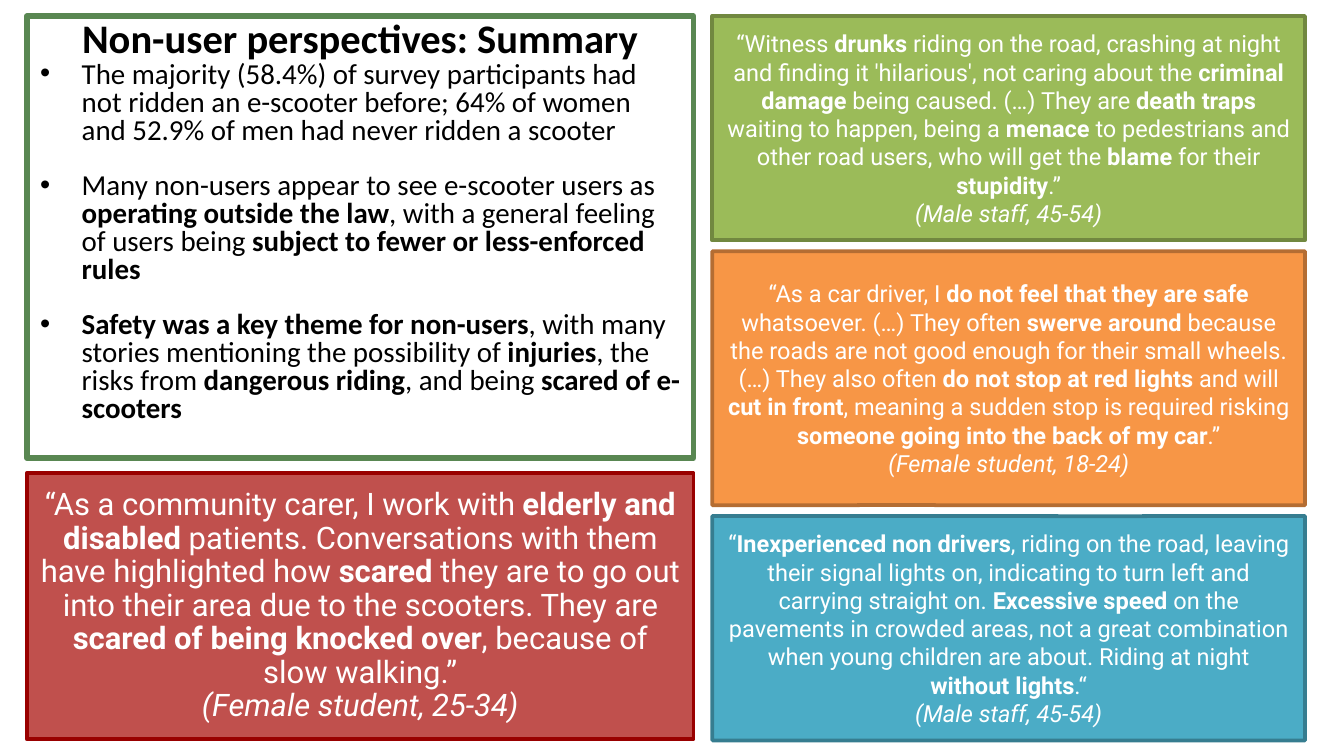
from lxml.etree import SubElement
from pptx import Presentation
from pptx.dml.color import RGBColor
from pptx.enum.shapes import MSO_SHAPE
from pptx.enum.text import MSO_ANCHOR, MSO_AUTO_SIZE, PP_ALIGN
from pptx.oxml.ns import qn
from pptx.util import Pt

# Content: text between ** marks is bold
TITLE = "Non-user perspectives: Summary"
POINTS = [
    "The majority (58.4%) of survey participants had not ridden an e-scooter before; "
    "64% of women and 52.9% of men had never ridden a scooter",
    "Many non-users appear to see e-scooter users as **operating outside the law**, with a "
    "general feeling of users being **subject to fewer or less-enforced rules**",
    "**Safety was a key theme for non-users**, with many stories mentioning the possibility of "
    "**injuries**, the risks from **dangerous riding**, and being **scared of e-scooters**",
]
CARER = dict(
    text="“As a community carer, I work with **elderly and disabled **patients. Conversations "
         "with them have highlighted how **scared** they are to go out into their area due to the "
         "scooters. They are **scared of being knocked over**, because of slow walking.”",
    who="(Female student, 25-34)", tone="red", tail=(0.202, -0.5), high=142.6)
QUOTES = [
    dict(text="“Witness **drunks** riding on the road, crashing at night and finding it "
              "'hilarious', not caring about the **criminal damage **being caused. (…) They are "
              "**death traps **waiting to happen, being a **menace** to pedestrians and other road "
              "users, who will get the **blame** for their **stupidity**.”",
         who="(Male staff, 45-54)", tone="green", tail=(0.5, 0.192), high=120.2),
    dict(text="“As a car driver, I **do not feel that they are safe **whatsoever. (…) They often "
              "**swerve around **because the roads are not good enough for their small wheels. (…) "
              "They also often **do not stop at red lights **and will **cut in front**, meaning a "
              "sudden stop is required risking **someone going into the back of my car**.”",
         who="(Female student, 18-24)", tone="orange", tail=(-0.168, 0.499), high=136.1),
    dict(text="“**Inexperienced non drivers**, riding on the road, leaving their signal lights on, "
              "indicating to turn left and carrying straight on. **Excessive speed **on the "
              "pavements in crowded areas, not a great combination when young children are about. "
              "Riding at night **without lights**.“",
         who="(Male staff, 45-54)", tone="blue", tail=(0.054, -0.499), high=120.2),
]

THEME = dict(
    head="Calibri", body="Roboto", ink="000000", pale="FFFFFF",
    title=21.7, point=15.5, large=16.6, small=12.6,
    # fill and line of each box
    white=("FFFFFF", "598752"), red=("C0504D", "990000"), green=("9BBB59", "718840"),
    orange=("F79646", "B46D33"), blue=("4BACC6", "367D90"),
)

# Layout
TOP, GAP = 8.6, 5.8
LEFT, WIDE, HIGH = 14.4, 357.1, 236.9
SIDE, SLIM = 381.6, 317.5
LOW = 253.4
INDENT = 22.3
HEAD = 21.2


def place(shape, x, y, w, h):
    shape.left, shape.top, shape.width, shape.height = Pt(x), Pt(y), Pt(w), Pt(h)


def write(para, text, font, size, color, align=PP_ALIGN.CENTER, space=1.0,
          before=0, bold=False, italic=False, bullet=False):
    if bullet:
        props = para._p.get_or_add_pPr()
        props.set("marL", str(Pt(INDENT)))
        props.set("indent", str(-Pt(INDENT)))
        tint = SubElement(props, qn("a:buClr"))
        SubElement(tint, qn("a:srgbClr"), val=color)
        SubElement(props, qn("a:buFont"), typeface="Arial")
        SubElement(props, qn("a:buChar"), char="•")
    para.alignment, para.line_spacing, para.space_before = align, space, Pt(before)
    for i, part in enumerate(text.split("**")):
        if part:
            run = para.add_run()
            run.text = part
            run.font.name, run.font.size = font, Pt(size)
            run.font.bold, run.font.italic = bold or i % 2 == 1, italic
            run.font.color.rgb = RGBColor.from_string(color)


def frame(shape, anchor, top=3.6):
    body = shape.text_frame
    body.word_wrap, body.auto_size = True, MSO_AUTO_SIZE.NONE
    body.vertical_anchor = anchor
    body.margin_left = body.margin_right = Pt(7.2)
    body.margin_top, body.margin_bottom = Pt(top), Pt(3.6)
    return body


def panel(kind, tone, width, *area):
    shape = slide.shapes.add_shape(kind, 0, 0, 0, 0)
    place(shape, *area)
    shape.shadow.inherit = False
    fill, line = THEME[tone]
    shape.fill.solid()
    shape.fill.fore_color.rgb = RGBColor.from_string(fill)
    shape.line.color.rgb = RGBColor.from_string(line)
    shape.line.width = Pt(width)
    return shape


def callout(quote, x, y, w, size, space=1.0):
    shape = panel(MSO_SHAPE.RECTANGULAR_CALLOUT, quote["tone"], 2, x, y, w, quote["high"])
    shape.adjustments[0], shape.adjustments[1] = quote["tail"]
    body = frame(shape, MSO_ANCHOR.MIDDLE)
    style = dict(font=THEME["body"], size=size, color=THEME["pale"], space=space)
    write(body.paragraphs[0], quote["text"], **style)
    write(body.add_paragraph(), quote["who"], italic=True, **style)


deck = Presentation()
deck.slide_width, deck.slide_height = Pt(720), Pt(405)
slide = deck.slides.add_slide(deck.slide_layouts[5])

# Quotes on the right
y = TOP
for quote in QUOTES:
    callout(quote, SIDE, y, SLIM, THEME["small"])
    y += quote["high"] + GAP

# Summary box with its points
box = panel(MSO_SHAPE.RECTANGLE, "white", 3, LEFT, TOP, WIDE, HIGH)
body = frame(box, MSO_ANCHOR.TOP, top=3.6 + HEAD)
for i, point in enumerate(POINTS):
    para = body.add_paragraph() if i else body.paragraphs[0]
    write(para, point, THEME["head"], THEME["point"], THEME["ink"], align=PP_ALIGN.LEFT,
          space=0.8, before=15 if i else 0, bullet=True)

# Title, laid over the top of the box
title = slide.shapes.title
place(title, LEFT, TOP, WIDE, HEAD + 7.2)
write(frame(title, MSO_ANCHOR.TOP).paragraphs[0], TITLE, THEME["head"], THEME["title"],
      THEME["ink"], space=0.8, bold=True)
box.element.addnext(title.element)

# Quote below the summary
callout(CARER, LEFT, LOW, WIDE, THEME["large"], space=0.9)

deck.save("out.pptx")
